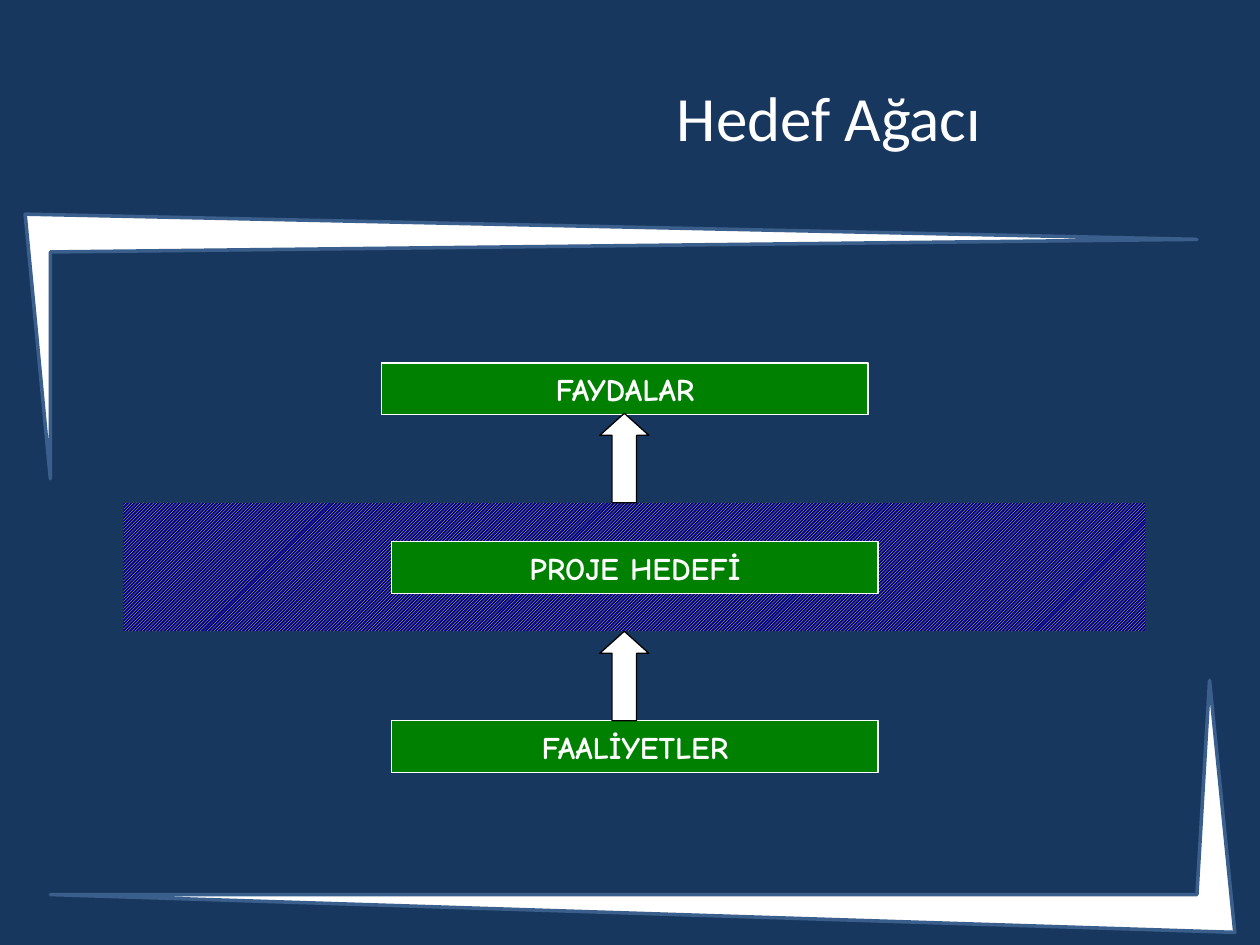
from dataclasses import dataclass

from pptx import Presentation
from pptx.dml.color import RGBColor
from pptx.enum.dml import MSO_PATTERN
from pptx.enum.shapes import MSO_SHAPE
from pptx.enum.text import MSO_ANCHOR, MSO_AUTO_SIZE, PP_ALIGN
from pptx.util import Inches, Pt


@dataclass(frozen=True)
class Theme:
    """Colours, fonts and type sizes of the slide."""
    back: str = "17375E"
    edge: str = "3A5F8C"
    white: str = "FFFFFF"
    black: str = "000000"
    green: str = "008000"
    navy: str = "000099"
    yellow: str = "FFFF00"
    head: str = "Calibri"
    body: str = "Comic Neue"
    big: int = 36
    small: int = 18


THEME = Theme()
WIDTH, HEIGHT = Inches(10), Inches(7.5)
COL, ROW = WIDTH / 100, HEIGHT / 75


def place(left, top, wide, high):
    """Turn grid columns and rows into slide lengths."""
    return [round(n * unit) for n, unit in zip((left, top, wide, high), (COL, ROW) * 2)]


def rgb(code):
    """Return the colour for a hex code."""
    return RGBColor.from_string(code)


def paint(shape, fill, line, width):
    """Give a shape a plain fill and outline, without shadow."""
    shape.shadow.inherit = False
    shape.fill.solid()
    shape.fill.fore_color.rgb = rgb(fill)
    shape.line.color.rgb = rgb(line)
    shape.line.width = Pt(width)


def write(frame, text, face, size, bold=False):
    """Write one centred white run."""
    par = frame.paragraphs[0]
    par.alignment = PP_ALIGN.CENTER
    par.space_before = Pt(0)
    run = par.add_run()
    run.text = text
    run.font.name = face
    run.font.size = Pt(size)
    run.font.bold = bold
    run.font.color.rgb = rgb(THEME.white)


def add_title(slide, text):
    """Move and fill the title placeholder."""
    title = slide.shapes.title
    title.left, title.top, title.width, title.height = place(36.6, 3, 58.4, 12.5)
    title.text_frame.vertical_anchor = MSO_ANCHOR.MIDDLE
    write(title.text_frame, text, THEME.head, THEME.big)


def add_corner(slide, points):
    """Draw a tapered corner through grid points."""
    build = slide.shapes.build_freeform(*points[0], scale=(COL, ROW))
    build.add_line_segments(points[1:], close=True)
    paint(build.convert_to_shape(), THEME.white, THEME.edge, 2)


def add_band(shapes, *spot):
    """Draw the hatched band behind the goal."""
    band = shapes.add_shape(MSO_SHAPE.RECTANGLE, *place(*spot))
    band.shadow.inherit = False
    band.fill.patterned()
    band.fill.pattern = MSO_PATTERN.LIGHT_UPWARD_DIAGONAL
    band.fill.fore_color.rgb = rgb(THEME.yellow)
    band.fill.back_color.rgb = rgb(THEME.navy)
    band.line.fill.background()


def add_box(shapes, text, left, top):
    """Draw a labelled green box."""
    box = shapes.add_shape(MSO_SHAPE.RECTANGLE, *place(left, top, 38.6, 4.1))
    paint(box, THEME.green, THEME.white, 0.75)
    box.text_frame.word_wrap = True
    box.text_frame.auto_size = MSO_AUTO_SIZE.SHAPE_TO_FIT_TEXT
    write(box.text_frame, text, THEME.body, THEME.small, True)


def add_arrow(shapes, top):
    """Draw an upward block arrow."""
    arrow = shapes.add_shape(MSO_SHAPE.UP_ARROW, *place(47.6, top, 3.9, 7.1))
    arrow.adjustments[0] = 0.5
    arrow.adjustments[1] = 0.45
    paint(arrow, THEME.white, THEME.black, 0.75)


def main():
    """Build and save the goal tree slide."""
    deck = Presentation()
    deck.slide_width, deck.slide_height = WIDTH, HEIGHT
    slide = deck.slides.add_slide(deck.slide_layouts[5])
    slide.background.fill.solid()
    slide.background.fill.fore_color.rgb = rgb(THEME.back)

    add_corner(slide, [(2, 17), (94.9, 19.4), (4.4, 19.7), (4.3, 37.5)])
    add_corner(slide, [(98, 73.7), (3.5, 71.4), (95.4, 71.1), (95.7, 54)])
    add_title(slide, "Hedef Ağacı")

    tree = slide.shapes.add_group_shape().shapes
    add_band(tree, 9.8, 39.9, 81.1, 10.2)
    labels = [("FAYDALAR", 30.3), ("PROJE HEDEFİ", 31.1), ("FAALİYETLER", 31.1)]
    for step, (text, left) in enumerate(labels):
        add_box(tree, text, left, 28.8 + 14.2 * step)
    for top in (50.1, 32.8):
        add_arrow(tree, top)

    deck.save("out.pptx")


if __name__ == "__main__":
    main()
